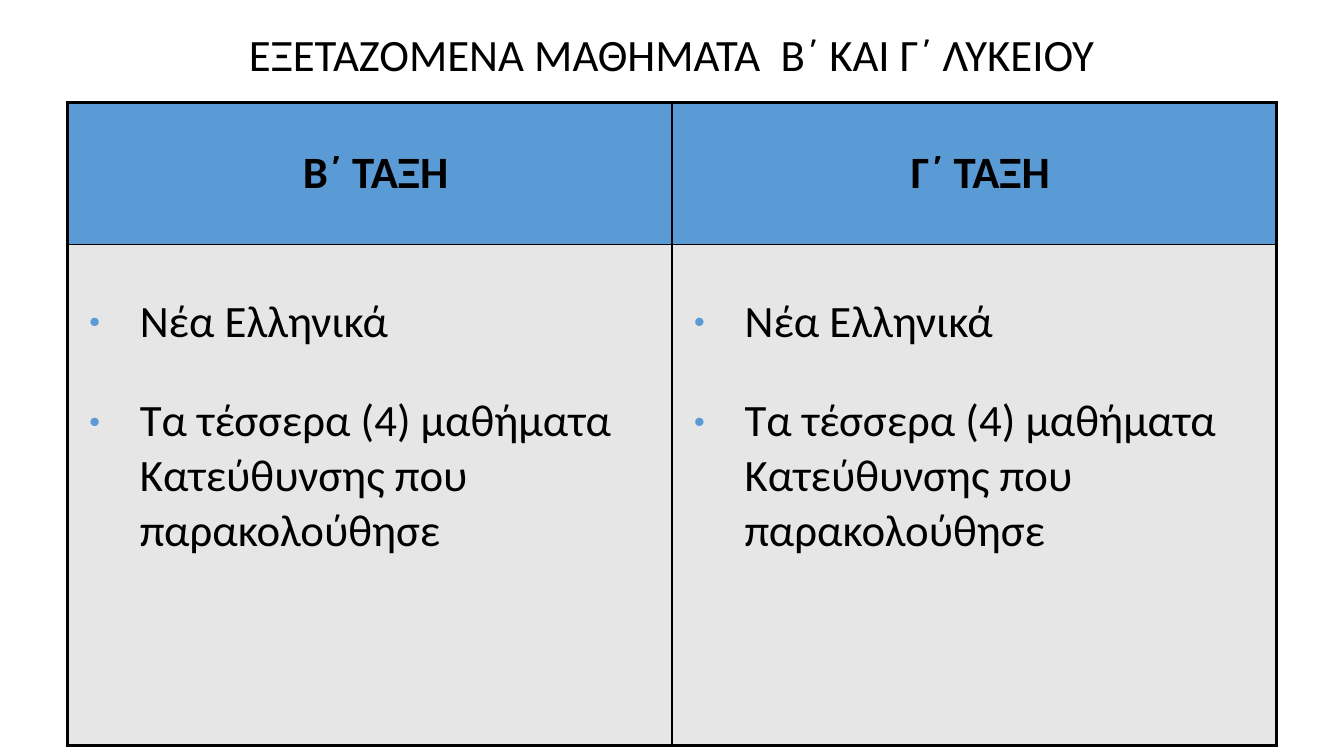
from lxml import etree
from pptx import Presentation, util as u
from pptx.dml.color import RGBColor
from pptx.enum import text
from pptx.oxml.ns import qn

COLORS = {"ink": "000000", "header": "5B9BD5", "body": "E7E6E6", "bullet": "5B9BD5"}
SUBJECTS = ["Νέα Ελληνικά", "Τα τέσσερα (4) μαθήματα Κατεύθυνσης που παρακολούθησε"]
CLASSES = {"Β΄ ΤΑΞΗ": SUBJECTS, "Γ΄ ΤΑΞΗ": SUBJECTS}


def rgb(name):
    return RGBColor.from_string(COLORS[name])


def write(paragraph, words, size=32, bold=False, color="ink",
          align=text.PP_ALIGN.LEFT, before=0, spacing=1.0):
    paragraph.alignment = align
    paragraph.space_before = u.Pt(before)
    paragraph.line_spacing = spacing
    run = paragraph.add_run()
    run.text = words
    run.font.name = "Calibri"
    run.font.size = u.Pt(size)
    run.font.bold = bold
    run.font.color.rgb = rgb(color)


def indent(paragraph, left, first=0):
    properties = paragraph._p.get_or_add_pPr()
    properties.set("marL", str(u.Inches(left)))
    properties.set("indent", str(u.Inches(first)))
    return properties


def add_bullet(paragraph):
    properties = indent(paragraph, 0.62, -0.5)
    color = etree.SubElement(properties, qn("a:buClr"))
    etree.SubElement(color, qn("a:srgbClr"), val=COLORS["bullet"])
    etree.SubElement(properties, qn("a:buSzPct"), val="68000")
    etree.SubElement(properties, qn("a:buFont"), typeface="Arial")
    etree.SubElement(properties, qn("a:buChar"), char="•")


def add_border(cell, side, points):
    line = etree.SubElement(cell._tc.get_or_add_tcPr(), qn("a:ln" + side),
                            w=str(u.Pt(points)))
    fill = etree.SubElement(line, qn("a:solidFill"))
    etree.SubElement(fill, qn("a:srgbClr"), val=COLORS["ink"])


class ExamSlide:
    outer, inner = 2.25, 1

    def __init__(self, deck):
        self.width, self.height = deck.slide_width, deck.slide_height
        self.slide = deck.slides.add_slide(deck.slide_layouts[5])

    def box(self, left, top, width, height):
        """Turn shares of the slide's size into lengths."""
        return (int(left * self.width), int(top * self.height),
                int(width * self.width), int(height * self.height))

    def title(self, words, *shares):
        title = self.slide.shapes.title
        title.left, title.top, title.width, title.height = self.box(*shares)
        frame = title.text_frame
        frame.word_wrap = True
        frame.auto_size = text.MSO_AUTO_SIZE.NONE
        frame.vertical_anchor = text.MSO_ANCHOR.MIDDLE
        write(frame.paragraphs[0], words, align=text.PP_ALIGN.CENTER, spacing=0.9)

    def style_cell(self, cell, fill, on_edge):
        """Draw thick lines on the sides that lie on the table's edge."""
        for side in "LRTB":
            add_border(cell, side, self.outer if side in on_edge else self.inner)
        cell.fill.solid()
        cell.fill.fore_color.rgb = rgb(fill)

    def class_table(self, classes, header_share, *shares):
        box = self.box(*shares)
        table = self.slide.shapes.add_table(2, len(classes), *box).table
        table.first_row = table.horz_banding = False
        table.rows[0].height = int(box[3] * header_share)
        table.rows[1].height = box[3] - table.rows[0].height

        for column, (name, subjects) in enumerate(classes.items()):
            ends = ("L" if column == 0 else "") + ("R" if column == len(classes) - 1 else "")
            header, body = table.cell(0, column), table.cell(1, column)
            self.style_cell(header, "header", ends + "T")
            self.style_cell(body, "body", ends + "B")

            header.vertical_anchor = text.MSO_ANCHOR.MIDDLE
            heading = header.text_frame.paragraphs[0]
            write(heading, name, bold=True, align=text.PP_ALIGN.CENTER)
            indent(heading, 0.12)

            body.margin_top = u.Inches(0.5)
            for order, subject in enumerate(subjects):
                frame = body.text_frame
                item = frame.add_paragraph() if order else frame.paragraphs[0]
                write(item, subject, before=32 if order else 0)
                add_bullet(item)


def main():
    deck = Presentation()
    deck.slide_width, deck.slide_height = u.Inches(13.33), u.Inches(7.5)
    exams = ExamSlide(deck)
    exams.title("ΕΞΕΤΑΖΟΜΕΝΑ ΜΑΘΗΜΑΤΑ  Β΄ ΚΑΙ Γ΄ ΛΥΚΕΙΟΥ", 0.05, 0.04, 0.9, 0.07)
    exams.class_table(CLASSES, 0.22, 0.05, 0.136, 0.9, 0.85)
    deck.save("out.pptx")


if __name__ == "__main__":
    main()
